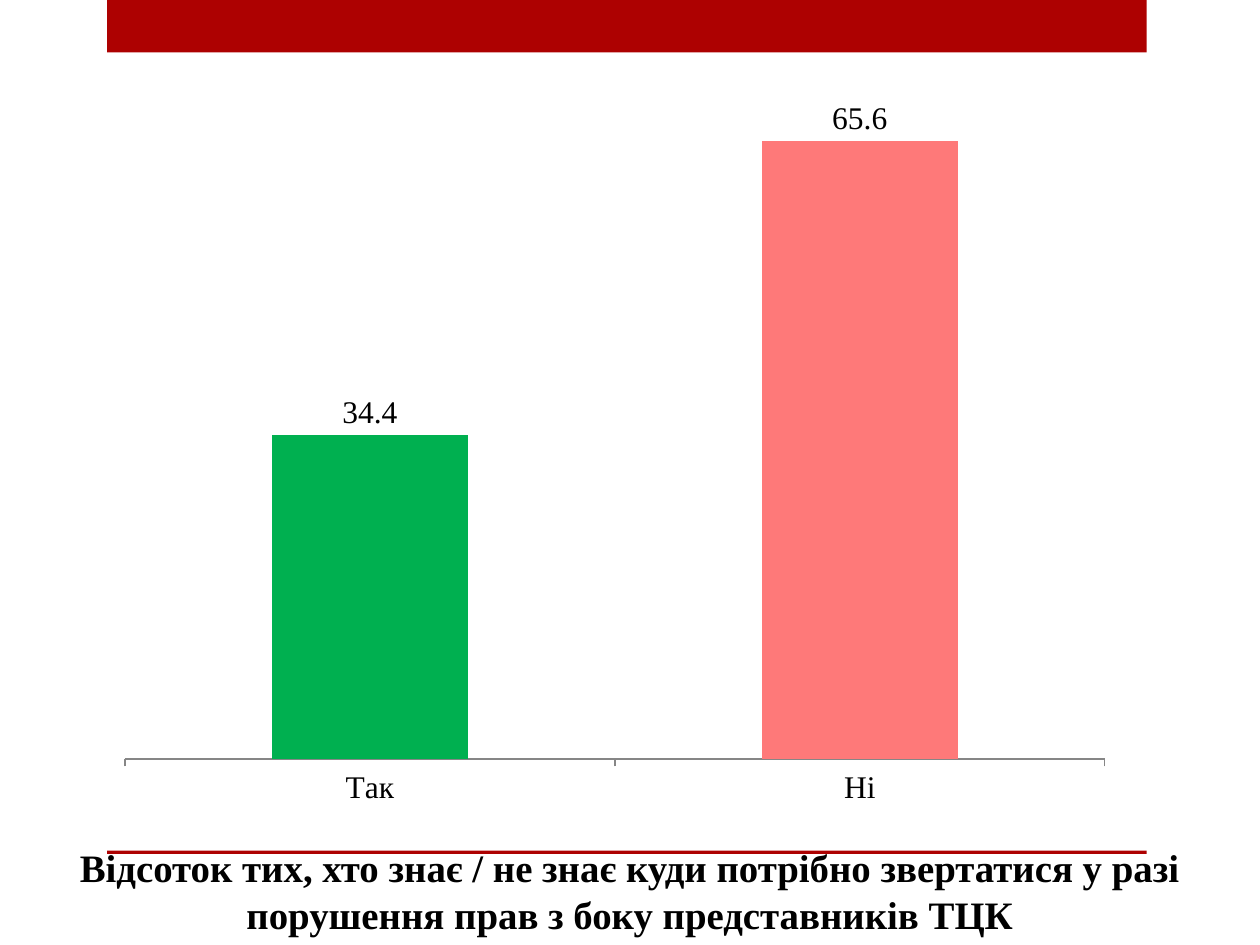
from pptx import Presentation
from pptx.chart.data import CategoryChartData
from pptx.dml.color import RGBColor
from pptx.enum.chart import XL_CHART_TYPE as ChartType
from pptx.enum.chart import XL_LABEL_POSITION as LabelPosition
from pptx.enum.chart import XL_TICK_MARK as TickMark
from pptx.enum.shapes import MSO_SHAPE as Shape
from pptx.enum.text import MSO_ANCHOR as Anchor
from pptx.enum.text import MSO_AUTO_SIZE as AutoSize
from pptx.enum.text import PP_ALIGN as Align
from pptx.util import Pt

FONT = "Times New Roman"
BLACK = RGBColor(0x00, 0x00, 0x00)
DARK_RED = RGBColor(0xAD, 0x01, 0x01)
GREEN = RGBColor(0x00, 0xB0, 0x50)
PINK = RGBColor(0xFE, 0x79, 0x79)
GRAY = RGBColor(0x86, 0x86, 0x86)

TITLE = ("Відсоток тих, хто знає / не знає куди потрібно звертатися у разі "
         "порушення прав з боку представників ТЦК")
ANSWERS = [("Так", 34.4, GREEN), ("Ні", 65.6, PINK)]
NUMBER_FORMAT = "###0.0"

# left, top, width, height in points
BANDS = [(61.2, 0, 594, 30), (61.2, 486, 594, 2)]
TITLE_AREA = (10.08, 488.88, 699.84, 50.4)
CHART_AREA = (59.76, 48.24, 583.2, 420.48)


def points(area):
    return [Pt(length) for length in area]


def style_font(font, size, bold=False, color=BLACK):
    font.name = FONT
    font.size = Pt(size)
    font.bold = bold
    font.color.rgb = color


def add_band(page, area):
    band = page.shapes.add_shape(Shape.RECTANGLE, *points(area))
    band.shadow.inherit = False
    band.fill.solid()
    band.fill.fore_color.rgb = DARK_RED
    band.line.fill.background()


def write_text(box, text, size, bold=False, align=Align.CENTER, anchor=Anchor.BOTTOM):
    frame = box.text_frame
    frame.word_wrap = True
    frame.auto_size = AutoSize.NONE
    frame.vertical_anchor = anchor
    para = frame.paragraphs[0]
    para.alignment = align
    span = para.add_run()
    span.text = text
    style_font(span.font, size, bold)


def add_answer_chart(page):
    data = CategoryChartData(number_format=NUMBER_FORMAT)
    data.categories = [name for name, _, _ in ANSWERS]
    data.add_series("Series 1", [value for _, value, _ in ANSWERS])
    chart = page.shapes.add_chart(
        ChartType.COLUMN_CLUSTERED, *points(CHART_AREA), data).chart
    chart.has_legend = False
    chart.has_title = False
    style_font(chart.font, 18)

    value_axis = chart.value_axis
    value_axis.visible = False
    value_axis.has_major_gridlines = False
    value_axis.minimum_scale = 0
    value_axis.maximum_scale = 70
    value_axis.tick_labels.number_format = NUMBER_FORMAT
    value_axis.tick_labels.number_format_is_linked = False

    category_axis = chart.category_axis
    category_axis.major_tick_mark = TickMark.OUTSIDE
    category_axis.format.line.color.rgb = GRAY

    plot = chart.plots[0]
    plot.gap_width = 150
    plot.vary_by_categories = False
    series = plot.series[0]
    series.format.fill.solid()
    series.format.fill.fore_color.rgb = DARK_RED
    for index, (_, _, color) in enumerate(ANSWERS):
        fill = series.points[index].format.fill
        fill.solid()
        fill.fore_color.rgb = color

    labels = series.data_labels
    labels.show_value = True
    labels.position = LabelPosition.OUTSIDE_END
    labels.number_format = NUMBER_FORMAT
    labels.number_format_is_linked = False
    style_font(labels.font, 18)


def main():
    deck = Presentation()
    deck.slide_width, deck.slide_height = Pt(720), Pt(540)
    page = deck.slides.add_slide(deck.slide_layouts[5])
    for area in BANDS:
        add_band(page, area)
    title = page.shapes.title
    title.left, title.top, title.width, title.height = points(TITLE_AREA)
    write_text(title, TITLE, 22.2, bold=True)
    # Keep the title in front of the bands
    page.shapes._spTree.append(title._element)
    add_answer_chart(page)
    deck.save("out.pptx")


if __name__ == "__main__":
    main()
